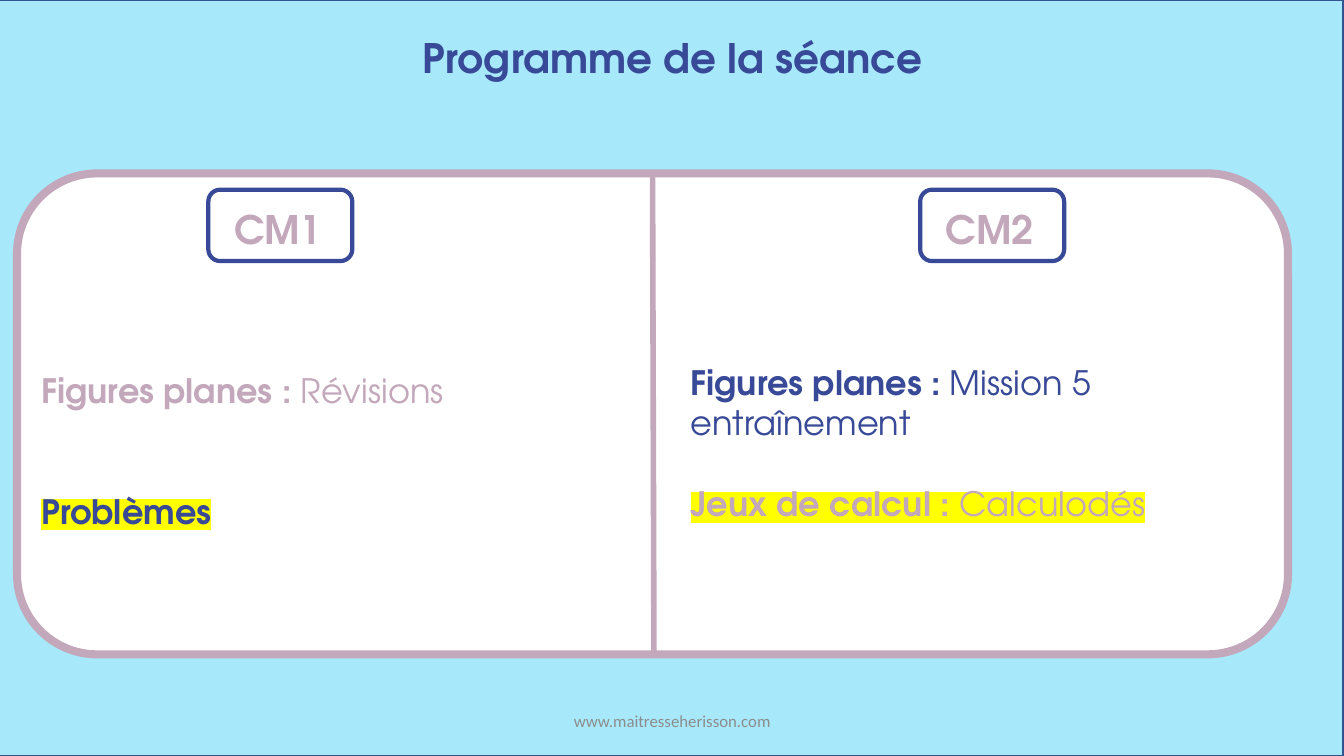
from pptx import Presentation
from pptx.dml.color import RGBColor
from pptx.enum.shapes import MSO_CONNECTOR as Link, MSO_SHAPE as Form
from pptx.enum.text import MSO_ANCHOR as Anchor, MSO_AUTO_SIZE as Fit, PP_ALIGN as Align
from pptx.oxml.ns import qn
from pptx.util import Cm, Pt
from lxml.etree import SubElement, Element

SKY, NAVY, MAUVE, WHITE = "A7E8FB", "374997", "C3A7BA", "FFFFFF"
EDGE, GREY, YELLOW = "325491", "8C8C8C", "FFFF00"
FACE = "TeX Gyre Adventor"


def color(target, code):
    target.rgb = RGBColor.from_string(code)


class Page:
    def __init__(self, deck, face):
        self.slide = deck.slides.add_slide(deck.slide_layouts[3])
        self.shapes = self.slide.shapes
        self.face = face

    def shape(self, form, box, fill, edge, width, group=None):
        item = (group or self).shapes.add_shape(form, *map(Cm, box))
        item.shadow.inherit = False
        item.fill.solid()
        color(item.fill.fore_color, fill)
        color(item.line.color, edge)
        item.line.width = Pt(width)
        return item

    def line(self, start, end, tint, width, top):
        item = self.shapes.add_connector(Link.STRAIGHT, *map(Cm, start + end))
        item.begin_connect(top, 0)
        color(item.line.color, tint)
        item.line.width = Pt(width)
        SubElement(item._element.spPr, qn("a:effectLst"))

    def run(self, para, words, size, tint, bold=False, mark=None, face=None):
        run = para.add_run()
        run.text = words
        style = {"name": face or self.face, "size": Pt(size), "bold": bold}
        for key, value in style.items():
            setattr(run.font, key, value)
        color(run.font.color, tint)
        if mark:
            glow = Element(qn("a:highlight"))
            SubElement(glow, qn("a:srgbClr"), val=mark)
            run.font._element.find(qn("a:solidFill")).addnext(glow)

    def frame(self, item, anchor=Anchor.TOP):
        frame = item.text_frame
        style = {"word_wrap": True, "auto_size": Fit.NONE, "vertical_anchor": anchor}
        for key, value in style.items():
            setattr(frame, key, value)
        return frame

    def text(self, box, words, size, tint, bold=False, align=Align.LEFT,
             anchor=Anchor.TOP, face=None, group=None):
        item = (group or self).shapes.add_textbox(*map(Cm, box))
        para = self.frame(item, anchor).paragraphs[0]
        para.alignment = align
        self.run(para, words, size, tint, bold, face=face)

    def holder(self, index, box):
        item = self.slide.placeholders[index]
        sides = ("left", "top", "width", "height")
        for side, value in zip(sides, box):
            setattr(item, side, Cm(value))
        node = item._element
        node.getparent().append(node)
        return self.frame(item)

    def title(self, box, words, size, tint):
        para = self.holder(0, box).paragraphs[0]
        para.alignment = Align.CENTER
        self.run(para, words, size, tint, True)

    def list(self, index, box, items, size, gap):
        frame = self.holder(index, box)
        for row, (head, tail, tint, mark) in enumerate(items):
            para = frame.add_paragraph() if row else frame.paragraphs[0]
            props = para._element.get_or_add_pPr()
            props.set("marL", "0")
            props.set("indent", "0")
            SubElement(props, qn("a:buNone"))
            para.space_before = Pt(gap if row else 0)
            self.run(para, head, size, tint, True, mark)
            if tail:
                self.run(para, tail, size, tint, False, mark)

    def badge(self, left, words):
        group = self.shapes.add_group_shape()
        self.shape(Form.ROUNDED_RECTANGLE, (left, 4.78, 3.63, 1.8), WHITE, NAVY, 3, group)
        self.text((left + 0.4, 5.05, 2.79, 1.45), words, 28, MAUVE, True, group=group)


def main():
    deck = Presentation()
    deck.slide_width, deck.slide_height = Cm(33.87), Cm(19.05)
    page = Page(deck, FACE)
    page.shape(Form.RECTANGLE, (-0.02, 0, 33.87, 19.05), SKY, EDGE, 1)
    panel = page.shape(Form.ROUNDED_RECTANGLE, (0.43, 4.37, 32.03, 12.12), WHITE, MAUVE, 5.75)
    page.title((0.03, 0.69, 33.87, 1.5), "Programme de la séance", 29, NAVY)
    page.badge(23.19, "CM2")
    page.text((11.23, 17.65, 11.43, 1.02), "www.maitresseherisson.com", 12, GREY,
              align=Align.CENTER, anchor=Anchor.MIDDLE, face="Calibri")
    page.badge(5.25, "CM1")
    page.list(1, (0.79, 9.19, 15.34, 4.37), [
        ("Figures planes : ", "Révisions", MAUVE, None),
        ("Problèmes", "", NAVY, YELLOW),
    ], 24, 57.5)
    page.line((16.43, 4.37), (16.48, 16.49), MAUVE, 4, panel)
    page.list(2, (17.15, 8.99, 14.58, 4.37), [
        ("Figures planes : ", "Mission 5 entraînement", NAVY, None),
        ("Jeux de calcul : ", "Calculodés", MAUVE, YELLOW),
    ], 24, 28.75)
    deck.save("out.pptx")


if __name__ == "__main__":
    main()
